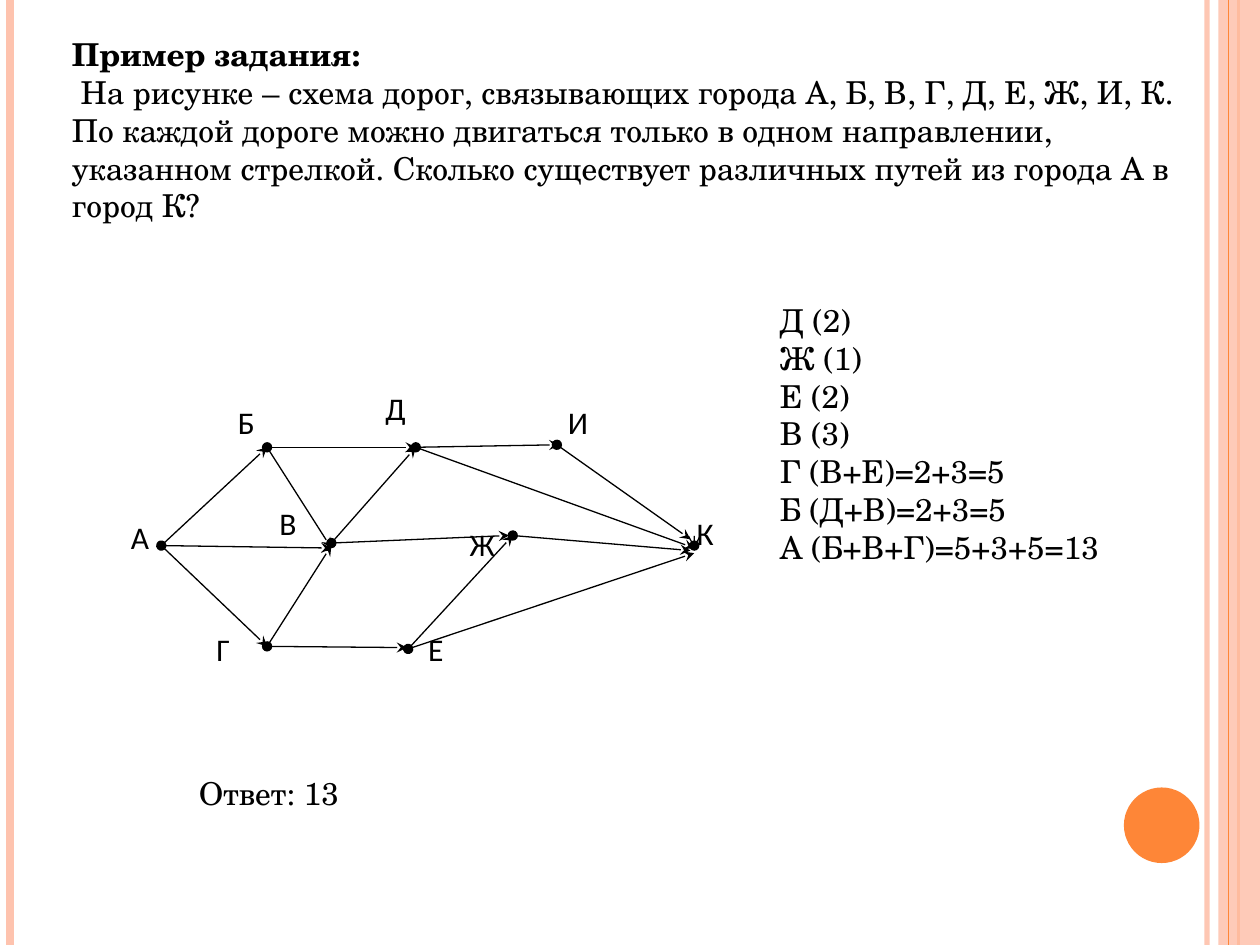
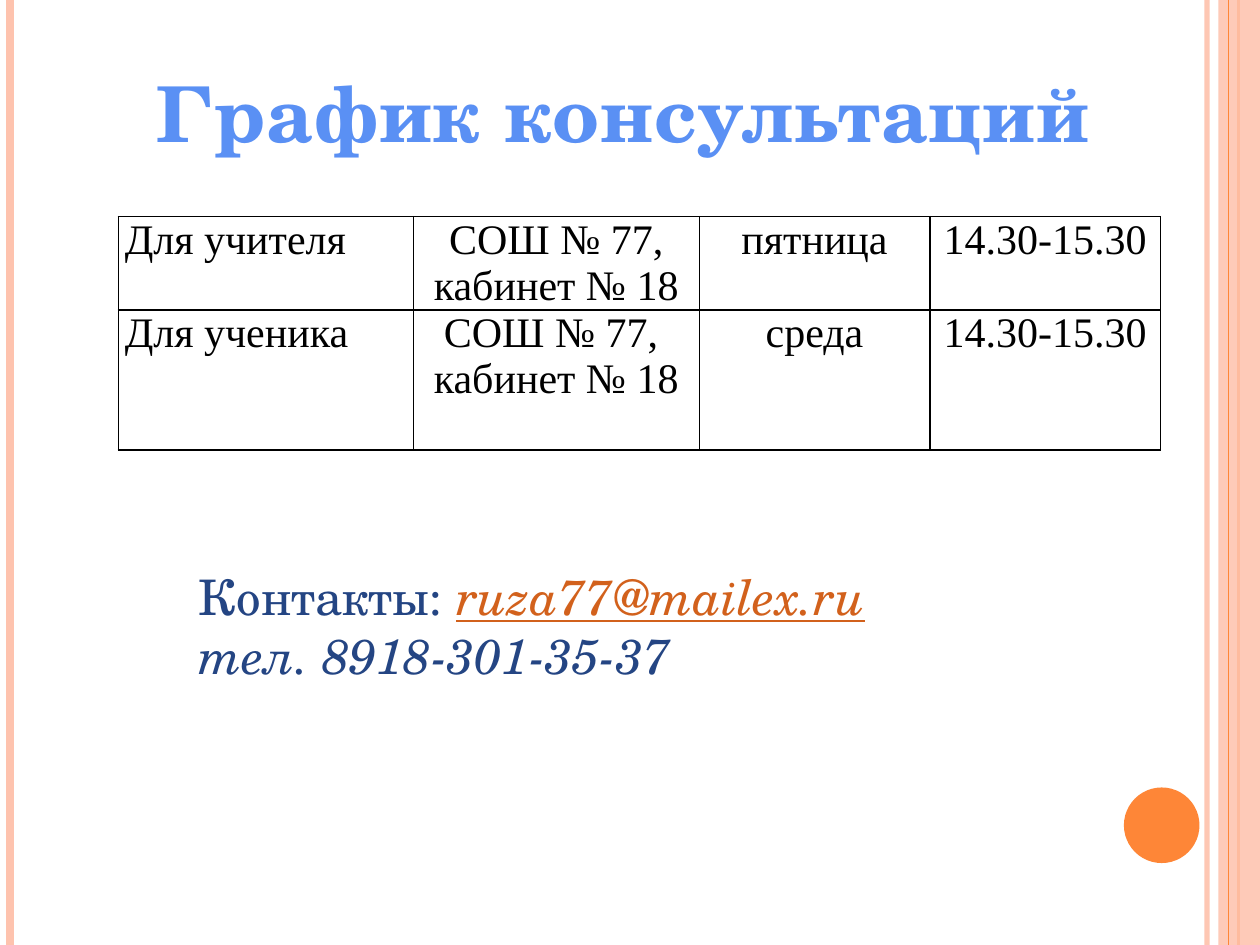
import pptx
import pptx.dml.color
import pptx.enum.shapes
import pptx.enum.text
import pptx.oxml
import pptx.oxml.ns
import pptx.util

Inches = pptx.util.Inches
Pt = pptx.util.Pt
RGBColor = pptx.dml.color.RGBColor
MSO_SHAPE = pptx.enum.shapes.MSO_SHAPE
PP_ALIGN = pptx.enum.text.PP_ALIGN
MSO_ANCHOR = pptx.enum.text.MSO_ANCHOR
qn = pptx.oxml.ns.qn

BLACK = RGBColor(0x00, 0x00, 0x00)
WHITE = RGBColor(0xFF, 0xFF, 0xFF)
PEACH = RGBColor(0xFE, 0xC3, 0xAE)
ORANGE = RGBColor(0xFE, 0x86, 0x37)
SKY = RGBColor(0x5A, 0x90, 0xF4)
NAVY = RGBColor(0x24, 0x45, 0x83)
RUST = RGBColor(0xD2, 0x61, 0x1C)

SERIF = "TeX Gyre Schola"
LABEL_FONT = "Calibri"
TABLE_FONT = "Times New Roman"
TITLE_ONLY = 5

# Road scheme: town -> point of the dot, corner of its label
TOWNS = {
    "А": ((1.28, 4.33), (0.94, 4.06)),
    "Б": ((2.12, 3.55), (1.79, 3.15)),
    "В": ((2.63, 4.31), (2.12, 3.95)),
    "Г": ((2.12, 5.13), (1.62, 4.95)),
    "Д": ((3.3, 3.55), (2.96, 3.04)),
    "Е": ((3.24, 5.15), (3.3, 4.95)),
    "Ж": ((4.07, 4.25), (3.63, 4.12)),
    "И": ((4.42, 3.53), (4.41, 3.15)),
    "К": ((5.51, 4.33), (5.43, 4.03)),
}
# Roads: start, end, offset of the arrow tip from the end dot
ROADS = [
    ("А", "Б", (0, 0)), ("А", "В", (0, 0.04)), ("А", "Г", (0, 0)),
    ("Б", "Д", (0, 0)), ("Б", "В", (0, 0.04)),
    ("В", "Ж", (-0.03, 0)), ("В", "Д", (0, 0)),
    ("Г", "В", (0, 0.02)), ("Г", "Е", (-0.01, -0.01)),
    ("Д", "И", (0.02, 0)), ("Д", "К", (0, 0.02)),
    ("Е", "Ж", (0, 0)), ("Е", "К", (0, 0.06)),
    ("Ж", "К", (-0.03, 0.04)), ("И", "К", (-0.03, -0.05)),
]
SOLUTION = ["Д (2)", "Ж (1)", "Е (2)", "В (3)", "Г (В+Е)=2+3=5",
            "Б (Д+В)=2+3=5", "А (Б+В+Г)=5+3+5=13"]
SCHEDULE = [
    ["Для учителя", " СОШ № 77, \nкабинет № 18", "пятница", "14.30-15.30"],
    ["Для ученика", "СОШ № 77, \nкабинет № 18", "среда", "14.30-15.30"],
]


def set_opacity(shape, percent):
    for color in shape._element.spPr.iter(qn("a:srgbClr")):
        color.append(pptx.oxml.parse_xml(
            f'<a:alpha {pptx.oxml.ns.nsdecls("a")} val="{percent * 1000}"/>'))


def add_line(page, start, end, color, width, head=None, tail=None):
    line = page.shapes.add_connector(
        pptx.enum.shapes.MSO_CONNECTOR.STRAIGHT,
        *(Inches(value) for value in (*start, *end)))
    line.line.color.rgb = color
    line.line.width = Pt(width)
    for tag, kind in (("headEnd", head), ("tailEnd", tail)):
        if kind:
            outline = line.line._get_or_add_ln()
            outline.append(outline.makeelement(qn(f"a:{tag}"), {"type": kind}))
    properties = line._element.spPr
    properties.append(properties.makeelement(qn("a:effectLst"), {}))
    return line


def add_filled_shape(page, kind, area, color):
    shape = page.shapes.add_shape(kind, *map(Inches, area))
    shape.fill.solid()
    shape.fill.fore_color.rgb = color
    shape.line.fill.background()
    shape.shadow.inherit = False
    return shape


def style_font(font, size, name, color, bold=False):
    font.size = Pt(size)
    font.name = name
    font.color.rgb = color
    font.bold = bold


def add_text(page, area, lines, size=18, name=SERIF, color=BLACK):
    box = page.shapes.add_textbox(*map(Inches, area))
    frame = box.text_frame
    frame.word_wrap = True
    frame.text = "\n".join(lines)
    for para in frame.paragraphs:
        style_font(para.font, size, name, color)
    return box


def set_title(page, area, lines, size, color, align):
    title = page.shapes.title
    title.left, title.top, title.width, title.height = map(Inches, area)
    frame = title.text_frame
    frame.text = "\n".join(lines)
    frame.auto_size = pptx.enum.text.MSO_AUTO_SIZE.NONE
    frame.vertical_anchor = MSO_ANCHOR.TOP
    for para in frame.paragraphs:
        para.alignment = align
        style_font(para.font, size, SERIF, color, bold=para is frame.paragraphs[0])
    style_font(frame.paragraphs[0].font, size, SERIF, color, bold=True)
    return frame


def add_page(deck):
    """Add a page with the shared side bands and the orange disc."""
    page = deck.slides.add_slide(deck.slide_layouts[TITLE_ONLY])

    def band_line(x, color, width):
        return add_line(page, (x, 0), (x, 7.5), color, width)

    set_opacity(band_line(9.58, PEACH, 3), 93)
    band_line(0.08, PEACH, 4.5)
    band_line(9.83, ORANGE, 1.5)
    band = add_filled_shape(page, MSO_SHAPE.RECTANGLE, (9.67, 0, 0.33, 7.5), PEACH)
    set_opacity(band, 87)
    band_line(9.75, ORANGE, 0.75)
    add_filled_shape(page, MSO_SHAPE.OVAL, (8.92, 6.25, 0.6, 0.6), ORANGE)
    return page


def add_road_scheme(page):
    for town, (_, corner) in TOWNS.items():
        add_text(page, (*corner, 0.5, 0.52), [town], name=LABEL_FONT)
    dotted = set()
    for start, end, (shift_x, shift_y) in ROADS:
        x, y = TOWNS[end][0]
        head = None if start in dotted else "oval"
        dotted.add(start)
        add_line(page, TOWNS[start][0], (x + shift_x, y + shift_y),
                 BLACK, 0.75, head, "stealth")
    # Small marks at Д and at the final town К
    add_line(page, (3.3, 3.53), (3.3, 3.53), BLACK, 0.75, tail="triangle")
    add_line(page, TOWNS["К"][0], (5.51, 4.35), BLACK, 0.75, "oval", "arrow")


def set_borders(cell):
    properties = cell._tc.get_or_add_tcPr()
    for index, side in enumerate("LRTB"):
        properties.insert(index, pptx.oxml.parse_xml(
            f'<a:ln{side} {pptx.oxml.ns.nsdecls("a")} w="12700"><a:solidFill>'
            f'<a:srgbClr val="{BLACK}"/></a:solidFill></a:ln{side}>'))


def add_schedule(page):
    table = page.shapes.add_table(
        len(SCHEDULE), len(SCHEDULE[0]),
        Inches(0.94), Inches(1.72), Inches(8.27), Inches(1.85)).table
    for column, width in zip(table.columns, (2.34, 2.27, 1.83, 1.83)):
        column.width = Inches(width)
    for row, height in zip(table.rows, (0.74, 1.11)):
        row.height = Inches(height)
    for row_index, texts in enumerate(SCHEDULE):
        for column_index, text in enumerate(texts):
            cell = table.cell(row_index, column_index)
            cell.text = text
            cell.margin_left = cell.margin_right = Inches(0.05)
            cell.margin_top = cell.margin_bottom = 0
            cell.fill.solid()
            cell.fill.fore_color.rgb = WHITE
            set_borders(cell)
            for para in cell.text_frame.paragraphs:
                para.alignment = PP_ALIGN.CENTER if column_index else PP_ALIGN.LEFT
                style_font(para.font, 24, TABLE_FONT, BLACK)


def add_contacts(page):
    box = add_text(page, (1.48, 4.45, 6.48, 1.35),
                   ["Контакты: ", "тел. 8918-301-35-37"], size=28, color=NAVY)
    first, second = box.text_frame.paragraphs
    second.font.italic = True
    address = first.add_run()
    address.text = "ruza77@mailex.ru"
    address.font.italic = True
    address.font.underline = True
    address.font.color.rgb = RUST


def build_task_page(deck):
    page = add_page(deck)
    set_title(page, (0.47, 0.23, 8.98, 1.62), [
        "Пример задания:",
        " На рисунке – схема дорог, связывающих города А, Б, В, Г, Д, Е, Ж, И, К. "
        "По каждой дороге можно двигаться только в одном направлении, указанном "
        "стрелкой. Сколько существует различных путей из города А в город К?",
    ], 18, BLACK, PP_ALIGN.LEFT)
    add_road_scheme(page)
    add_text(page, (1.48, 6.09, 2.27, 0.4), ["Ответ: 13"])
    add_text(page, (6.09, 2.34, 2.81, 2.22), SOLUTION)


def build_schedule_page(deck):
    page = add_page(deck)
    frame = set_title(page, (1.09, 0.47, 7.72, 0.84), ["График консультаций"],
                      44, SKY, PP_ALIGN.CENTER)
    frame.word_wrap = False
    frame.paragraphs[0].runs[0].font._element.set("spc", "50")
    add_schedule(page)
    add_contacts(page)


def main():
    deck = pptx.Presentation()
    deck.slide_width = Inches(10)
    deck.slide_height = Inches(7.5)
    build_task_page(deck)
    build_schedule_page(deck)
    deck.save("out.pptx")


if __name__ == "__main__":
    main()
